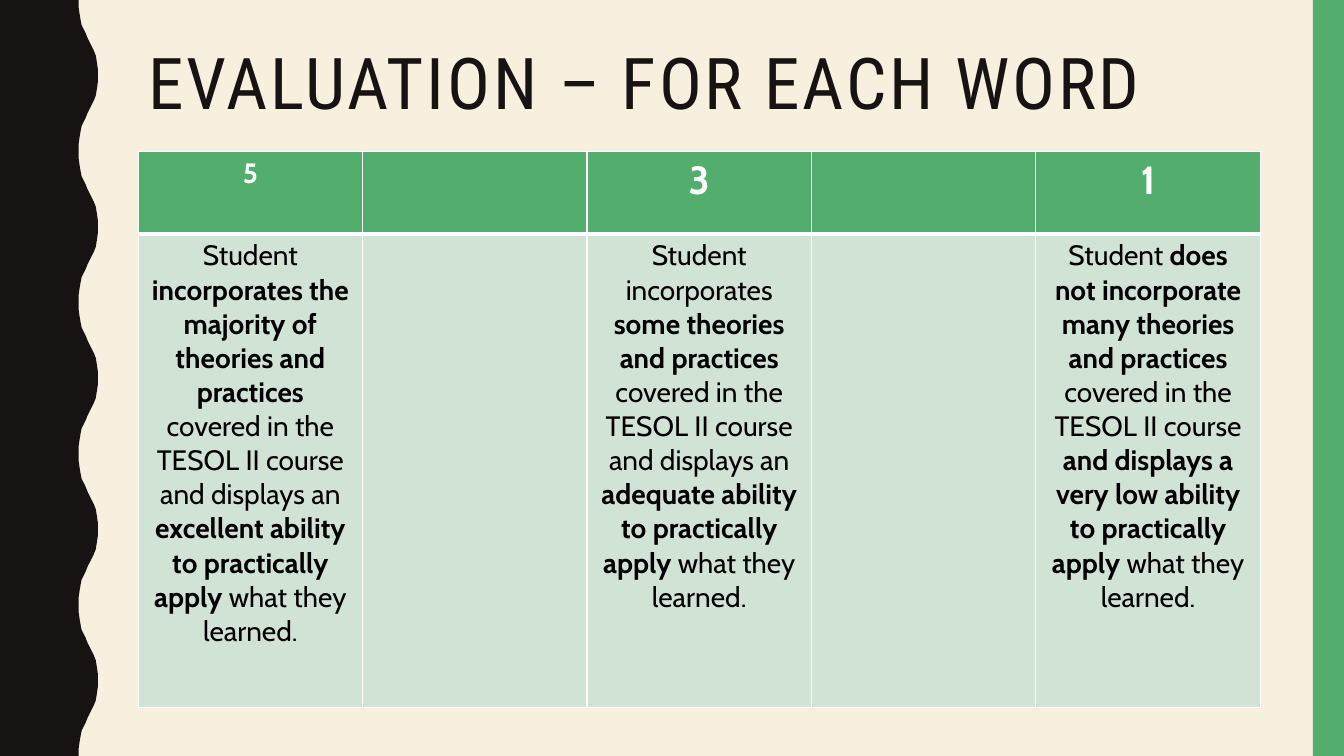
from dataclasses import dataclass

from lxml import etree
from pptx import Presentation
from pptx import util as u
from pptx.dml.color import RGBColor
from pptx.enum import shapes, text
from pptx.oxml.ns import qn


@dataclass(frozen=True)
class Theme:
    cream: str = "F7F0DF"
    ink: str = "171312"
    green: str = "53AE6E"
    mint: str = "D1E3D5"
    white: str = "FFFFFF"
    black: str = "000000"
    heading_font: str = "Roboto Condensed"
    body_font: str = "Cabin"
    heading_size: int = 51
    score_size: int = 28
    body_size: int = 20


THEME = Theme()
TITLE = "EVALUATION – FOR EACH WORD"
SCORES = [("5", THEME.body_size), ("", THEME.body_size), ("3", THEME.score_size),
          ("", THEME.body_size), ("1", THEME.score_size)]
# Each description alternates regular and bold passages, starting with regular.
DESCRIPTIONS = [
    ["Student ", "incorporates the majority of theories and practices ",
     "covered in the TESOL II course and displays an ",
     "excellent ability to practically apply ", "what they learned."],
    [],
    ["Student incorporates ", "some theories and practices ",
     "covered in the TESOL II course and displays an ",
     "adequate ability to practically apply ", "what they learned."],
    [],
    ["Student ", "does not incorporate many theories and practices",
     " covered in the TESOL II course ",
     "and displays a very low ability to practically apply ", "what they learned."],
]
WAVE_PERIOD = 1.5
WAVE_COUNT = 5
HALF_WAVE = [(0.78, 0), (0.78, 0.07), (0.79, 0.14), (0.8, 0.2), (0.81, 0.25),
             (0.83, 0.29), (0.85, 0.33), (0.87, 0.38), (0.89, 0.42), (0.91, 0.46),
             (0.93, 0.5), (0.95, 0.55), (0.96, 0.61), (0.97, 0.68), (0.97, 0.75)]


def paint(shape, color):
    shape.shadow.inherit = False
    shape.fill.solid()
    shape.fill.fore_color.rgb = RGBColor.from_string(color)
    shape.line.fill.background()


def format_font(font, color, **values):
    for name, value in values.items():
        setattr(font, name, value)
    font.color.rgb = RGBColor.from_string(color)


def add_wavy_edge(slide):
    full_wave = HALF_WAVE + [(x, WAVE_PERIOD - y) for x, y in HALF_WAVE[-2::-1]]
    edge = [(x, y + WAVE_PERIOD * wave) for wave in range(WAVE_COUNT) for x, y in full_wave]
    outline = slide.shapes.build_freeform(0, 0)
    outline.add_line_segments([(u.Inches(x), u.Inches(y))
                               for x, y in edge + [(0, WAVE_PERIOD * WAVE_COUNT)]])
    paint(outline.convert_to_shape(), THEME.ink)


def add_side_bar(slide):
    bar = slide.shapes.add_shape(shapes.MSO_SHAPE.RECTANGLE, u.Inches(13.02), 0,
                                 u.Inches(0.31), u.Inches(7.5))
    paint(bar, THEME.green)


def set_title(slide):
    title = slide.shapes.title
    place = {"left": 1.37, "top": 0.42, "width": 11.13, "height": 1.63}
    for name, inches in place.items():
        setattr(title, name, u.Inches(inches))
    frame = title.text_frame
    frame_format = {"word_wrap": True, "auto_size": text.MSO_AUTO_SIZE.NONE,
                    "vertical_anchor": text.MSO_ANCHOR.TOP}
    for name, value in frame_format.items():
        setattr(frame, name, value)
    paragraph = frame.paragraphs[0]
    paragraph.alignment = text.PP_ALIGN.LEFT
    paragraph.line_spacing = 0.9
    heading = paragraph.add_run()
    heading.text = TITLE
    format_font(heading.font, THEME.ink, name=THEME.heading_font,
                size=u.Pt(THEME.heading_size))
    heading.font._element.set("spc", "200")


def set_borders(cell, bottom):
    """Draw white cell borders, with the bottom one as wide as given in points."""
    properties = cell._tc.get_or_add_tcPr()
    for side, width in {"lnL": 1, "lnR": 1, "lnT": 1, "lnB": bottom}.items():
        line = etree.SubElement(properties, qn(f"a:{side}"), w=str(u.Pt(width)))
        fill = etree.SubElement(line, qn("a:solidFill"))
        etree.SubElement(fill, qn("a:srgbClr"), val=THEME.white)


def fill_cell(cell, passages, background, color, size, first_bold, bottom):
    """Write passages that alternate in weight, the first one bold if asked."""
    set_borders(cell, bottom)
    cell.fill.solid()
    cell.fill.fore_color.rgb = RGBColor.from_string(background)
    paragraph = cell.text_frame.paragraphs[0]
    paragraph.alignment = text.PP_ALIGN.CENTER
    for index, passage in enumerate(passages):
        run = paragraph.add_run()
        run.text = passage
        format_font(run.font, color, name=THEME.body_font, size=u.Pt(size),
                    bold=(index % 2 == 1) != first_bold)


def add_rubric(slide):
    rubric = slide.shapes.add_table(2, len(SCORES), u.Inches(1.37), u.Inches(1.5),
                                    u.Inches(11.13), u.Inches(5.52)).table
    for row, height in zip(rubric.rows, (0.82, 4.7)):
        row.height = u.Inches(height)
    for column, ((score, size), description) in enumerate(zip(SCORES, DESCRIPTIONS)):
        fill_cell(rubric.cell(0, column), [score] if score else [], THEME.green,
                  THEME.white, size, first_bold=True, bottom=3)
        fill_cell(rubric.cell(1, column), description, THEME.mint,
                  THEME.black, THEME.body_size, first_bold=False, bottom=1)


def main():
    deck = Presentation()
    deck.slide_width, deck.slide_height = u.Inches(13.33), u.Inches(7.5)
    slide = deck.slides.add_slide(deck.slide_layouts.get_by_name("Title Only"))
    slide.background.fill.solid()
    slide.background.fill.fore_color.rgb = RGBColor.from_string(THEME.cream)
    add_wavy_edge(slide)
    add_side_bar(slide)
    set_title(slide)
    add_rubric(slide)
    deck.save("out.pptx")


if __name__ == "__main__":
    main()
